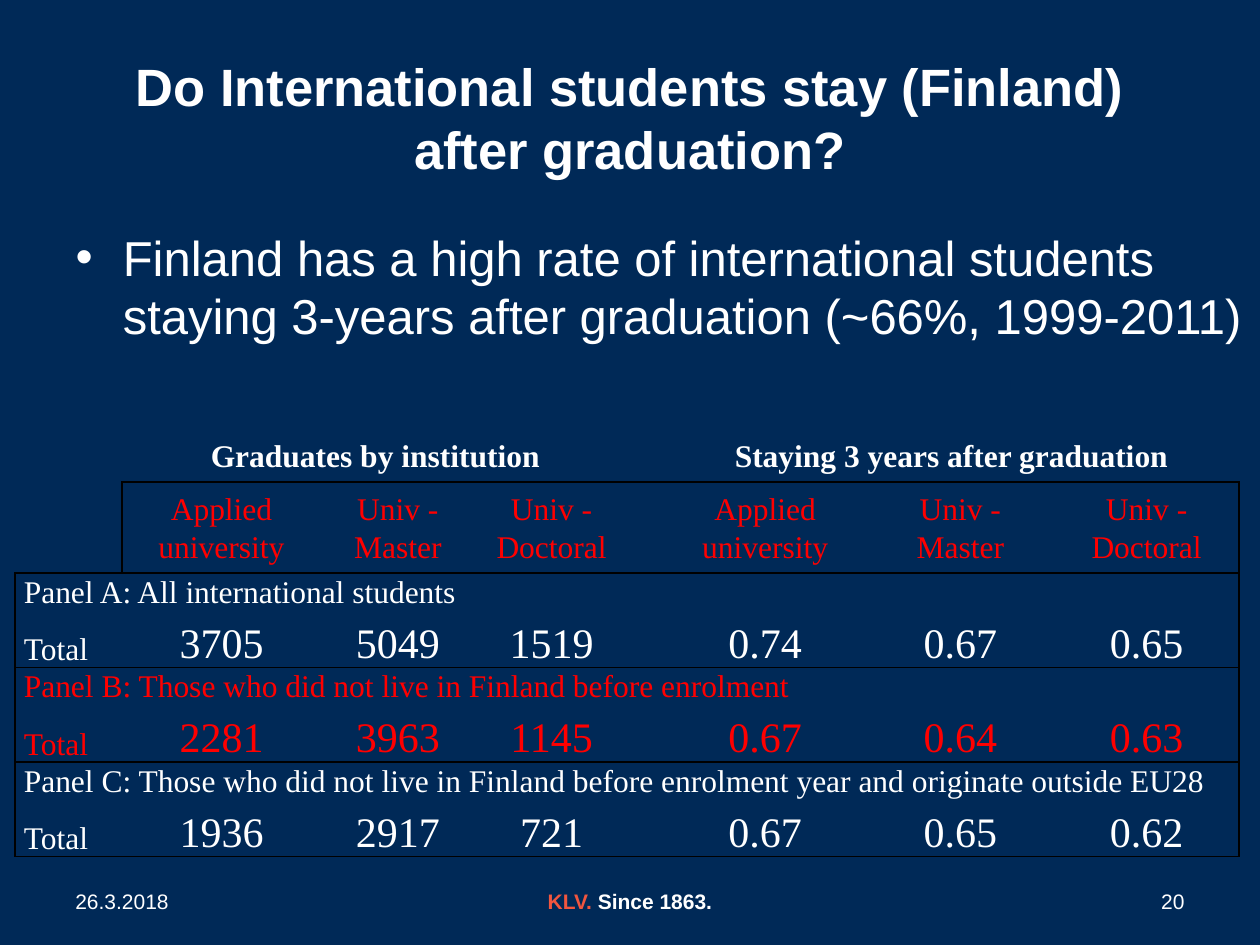
from lxml import etree
from pptx import Presentation
from pptx import util as u
from pptx.dml.color import RGBColor
from pptx.enum import text
from pptx.oxml import ns

COLORS = {
    "navy": "002957",
    "white": "FFFFFF",
    "red": "FF0000",
    "orange": "F1563F",
    "black": "000000",
}
NO_STYLE = "{2D5ABB26-0587-4C30-8999-92F81FD0307C}"
LEFT, CENTER, RIGHT = text.PP_ALIGN.LEFT, text.PP_ALIGN.CENTER, text.PP_ALIGN.RIGHT
TOP, MIDDLE, BOTTOM = text.MSO_ANCHOR.TOP, text.MSO_ANCHOR.MIDDLE, text.MSO_ANCHOR.BOTTOM

COLUMN_WIDTHS = [2.16, 4.01, 3.1, 3.1, 0.71, 4.09, 3.78, 3.73]
ROW_HEIGHTS = [0.91, 1.83] + [0.81, 0.91] * 3
GROUPS = {1: "Graduates by institution", 5: "Staying 3 years after graduation"}
INSTITUTIONS = ["Applied university", "Univ - Master", "Univ - Doctoral"]
PANELS = [
    ("Panel A: All international students", "white",
     ["3705", "5049", "1519", "", "0.74", "0.67", "0.65"]),
    ("Panel B: Those who did not live in Finland before enrolment", "red",
     ["2281", "3963", "1145", "", "0.67", "0.64", "0.63"]),
    ("Panel C: Those who did not live in Finland before enrolment year "
     "and originate outside EU28", "white",
     ["1936", "2917", "721", "", "0.67", "0.65", "0.62"]),
]


def color(name):
    return RGBColor.from_string(COLORS[name])


def style(font, size, color_name="white", bold=False, name="Arial"):
    font.name = name
    font.size = u.Pt(size)
    font.bold = bold
    font.color.rgb = color(color_name)


def place(shape, left, top, width, height):
    shape.left, shape.top = u.Cm(left), u.Cm(top)
    shape.width, shape.height = u.Cm(width), u.Cm(height)


def add_title(slide, *box):
    title = slide.shapes.title
    place(title, *box)
    frame = title.text_frame
    frame.text = "Do International students stay (Finland) after graduation?"
    frame.vertical_anchor = MIDDLE
    frame.auto_size = text.MSO_AUTO_SIZE.NONE
    paragraph = frame.paragraphs[0]
    paragraph.alignment = CENTER
    style(paragraph.font, 30, bold=True)


def add_body(slide, *box):
    body = slide.placeholders[1]
    place(body, *box)
    frame = body.text_frame
    frame.text = ("Finland has a high rate of international students "
                  "staying 3-years after graduation (~66%, 1999-2011)")
    frame.auto_size = text.MSO_AUTO_SIZE.NONE
    paragraph = frame.paragraphs[0]
    paragraph.space_before = u.Pt(7.7)
    style(paragraph.font, 28)


def write(cell, words, size=18, color_name="white", alignment=CENTER,
          anchor=BOTTOM, bold=False):
    cell.text = words
    cell.vertical_anchor = anchor
    paragraph = cell.text_frame.paragraphs[0]
    paragraph.alignment = alignment
    paragraph.line_spacing = 1.07
    style(paragraph.font, size, color_name, bold, "Times New Roman")


def set_borders(cell, edges):
    properties = cell._tc.get_or_add_tcPr()
    for position, (side, drawn) in enumerate(edges.items()):
        line = etree.Element(ns.qn(f"a:ln{side}"), w=str(u.Pt(1)))
        if drawn:
            fill = etree.SubElement(line, ns.qn("a:solidFill"))
            etree.SubElement(fill, ns.qn("a:srgbClr"), val=COLORS["black"])
        else:
            etree.SubElement(line, ns.qn("a:noFill"))
        properties.insert(position, line)


def outline(table, first_row, last_row, first_column, last_column):
    for row in range(first_row, last_row + 1):
        for column in range(first_column, last_column + 1):
            cell = table.cell(row, column)
            span = cell.span_width if cell.is_merge_origin else 1
            set_borders(cell, {
                "L": column == first_column,
                "R": column + span - 1 == last_column,
                "T": row == first_row,
                "B": row == last_row,
            })


def add_results_table(slide, left, top):
    frame = slide.shapes.add_table(
        len(ROW_HEIGHTS), len(COLUMN_WIDTHS), u.Cm(left), u.Cm(top),
        u.Cm(sum(COLUMN_WIDTHS)), u.Cm(sum(ROW_HEIGHTS)))
    table = frame.table
    table.first_row = table.horz_banding = False
    table._tbl.tblPr.find(ns.qn("a:tableStyleId")).text = NO_STYLE
    for column, width in zip(table.columns, COLUMN_WIDTHS):
        column.width = u.Cm(width)
    for row, height in zip(table.rows, ROW_HEIGHTS):
        row.height = u.Cm(height)
    for cell in table.iter_cells():
        cell.margin_left = cell.margin_right = u.Cm(0.18)
        cell.margin_top = cell.margin_bottom = 0
        cell.fill.background()

    for start, heading in GROUPS.items():
        table.cell(0, start).merge(table.cell(0, start + 2))
        write(table.cell(0, start), heading, anchor=TOP, bold=True)
        for column, institution in enumerate(INSTITUTIONS, start):
            write(table.cell(1, column), institution, color_name="red", anchor=MIDDLE)
    last_column = len(COLUMN_WIDTHS) - 1
    outline(table, 1, 1, 1, last_column)

    for index, (heading, color_name, values) in enumerate(PANELS):
        row = 2 + 2 * index
        table.cell(row, 0).merge(table.cell(row, last_column))
        write(table.cell(row, 0), heading, 18, color_name, LEFT, TOP)
        write(table.cell(row + 1, 0), "Total", 18, color_name, LEFT)
        for column, value in enumerate(values, 1):
            if value:
                write(table.cell(row + 1, column), value, 24, color_name)
        outline(table, row, row + 1, 0, last_column)


def add_footer(slide, left, top, width, height):
    side_width, middle_width = 5.92, 8.05
    parts = [
        (0, side_width, LEFT, [("26.3.2018", "white")], False),
        ((width - middle_width) / 2, middle_width, CENTER,
         [("KLV. ", "orange"), ("Since 1863.", "white")], True),
        (width - side_width, side_width, RIGHT, [("20", "white")], False),
    ]
    for offset, part_width, alignment, runs, bold in parts:
        box = slide.shapes.add_textbox(
            u.Cm(left + offset), u.Cm(top), u.Cm(part_width), u.Cm(height))
        frame = box.text_frame
        frame.word_wrap = True
        frame.vertical_anchor = MIDDLE
        paragraph = frame.paragraphs[0]
        paragraph.alignment = alignment
        for words, color_name in runs:
            run = paragraph.add_run()
            run.text = words
            style(run.font, 12, color_name, bold)


def main():
    presentation = Presentation()
    presentation.slide_width, presentation.slide_height = u.Cm(25.4), u.Cm(19.05)
    slide = presentation.slides.add_slide(presentation.slide_layouts[1])
    background = slide.background.fill
    background.solid()
    background.fore_color.rgb = color("navy")
    add_title(slide, 1.27, 0.76, 22.86, 3.18)
    add_body(slide, 1.27, 4.45, 24.13, 3.28)
    add_footer(slide, 1.27, 17.65, 22.86, 1.02)
    add_results_table(slide, 0.3, 8.81)
    presentation.save("out.pptx")


if __name__ == "__main__":
    main()
